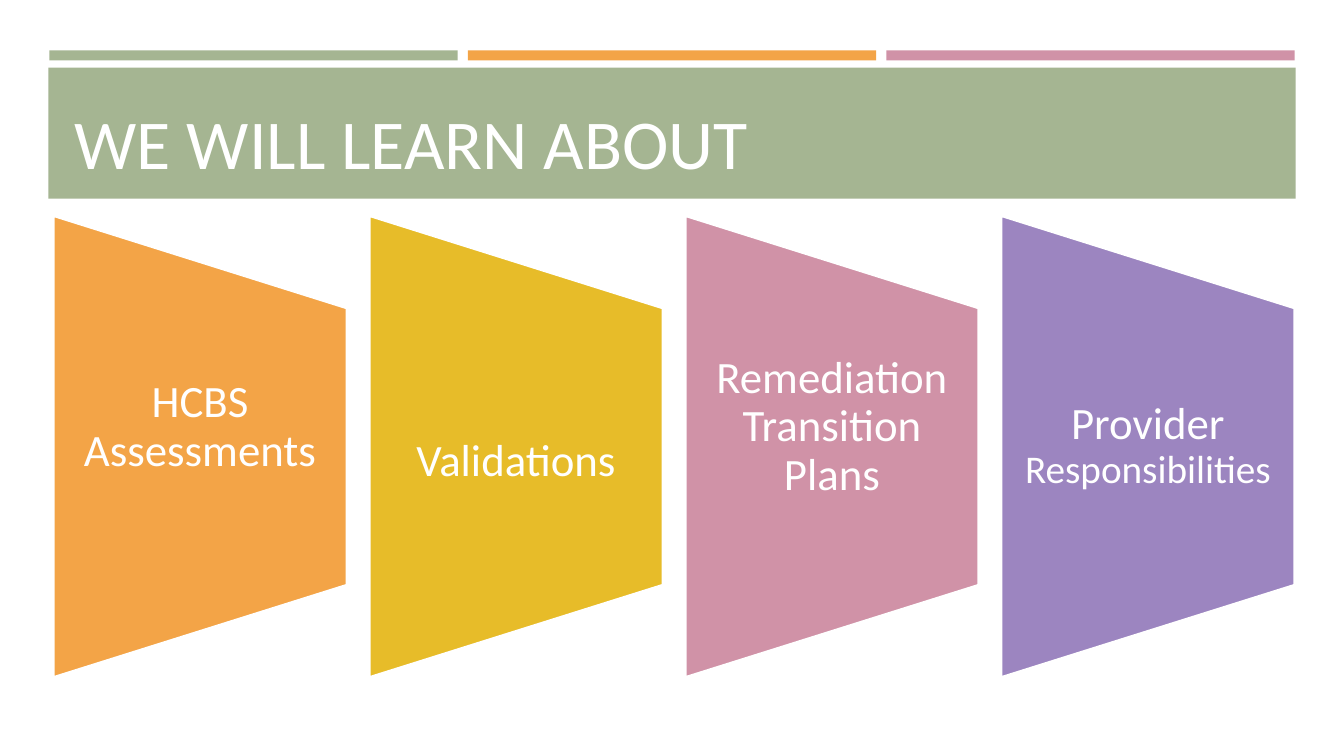
import pptx
import pptx.util
import pptx.dml.color
import pptx.enum.shapes
import pptx.enum.text

Inches = pptx.util.Inches
SHAPE = pptx.enum.shapes.MSO_SHAPE
ANCHOR = pptx.enum.text.MSO_ANCHOR
ALIGN = pptx.enum.text.PP_ALIGN

WHITE, GREEN, ORANGE = "FFFFFF", "A5B592", "F3A447"
GOLD, PINK, PURPLE = "E7BC29", "D092A7", "9C85C0"

# Runs of text with their sizes, fill, side inset, and text shift
CARDS = [
    ([("HCBS Assessments", 32)], ORANGE, 0.22, -0.19),
    ([("Validations", 32)], GOLD, 0.1, 0.15),
    ([("Remediation Transition Plans", 32)], PINK, 0.22, -0.19),
    ([("Provider ", 32), ("Responsibilities", 28)], PURPLE, 0.22, 0),
]


def color(code):
    return pptx.dml.color.RGBColor.from_string(code)


def place(shape, left, top, width, height):
    shape.left, shape.top = Inches(left), Inches(top)
    shape.width, shape.height = Inches(width), Inches(height)


def write(shape, runs, align=ALIGN.CENTER, anchor=ANCHOR.MIDDLE,
          side=0.1, edge=0, space=0.9):
    """Fill a shape with one paragraph made of (text, size) runs."""
    frame = shape.text_frame
    frame.word_wrap = True
    frame.auto_size = pptx.enum.text.MSO_AUTO_SIZE.NONE
    frame.vertical_anchor = anchor
    frame.margin_left = frame.margin_right = Inches(side)
    frame.margin_top = frame.margin_bottom = Inches(edge)
    para = frame.paragraphs[0]
    para.alignment, para.line_spacing = align, space
    for text, size in runs:
        run = para.add_run()
        run.text = text
        run.font.name = "Calibri"
        run.font.size = pptx.util.Pt(size)
        run.font.color.rgb = color(WHITE)


def draw(slide, kind, left, top, width, height, fill, line=None):
    shape = slide.shapes.add_shape(kind, 0, 0, 0, 0)
    place(shape, left, top, width, height)
    shape.shadow.inherit = False
    shape.fill.solid()
    shape.fill.fore_color.rgb = color(fill)
    if line:
        shape.line.color.rgb = color(line)
        shape.line.width = pptx.util.Pt(1.75)
    else:
        shape.line.fill.background()
    return shape


def header(slide, left, top, width):
    bar, step = 4.05, 4.15
    for i, fill in enumerate([GREEN, ORANGE, PINK]):
        draw(slide, SHAPE.RECTANGLE, left + 0.01 + i * step, top,
             bar, 0.1, fill)
    draw(slide, SHAPE.RECTANGLE, left, top + 0.17, width, 1.3, GREEN)
    title = slide.shapes.title
    place(title, left + 0.16, top + 0.27, width - 0.31, 1.11)
    write(title, [("WE WILL LEARN ABOUT", 50)], align=ALIGN.LEFT,
          anchor=ANCHOR.BOTTOM, edge=0.05)
    # Bring the title in front of the band
    slide.shapes._spTree.append(title._element)


def card(slide, left, top, width, height, runs, fill, side, shift):
    """Draw a trapezoid with its long edge on the left, and its label."""
    turn = (height - width) / 2
    shape = draw(slide, SHAPE.FLOWCHART_MANUAL_OPERATION, left - turn,
                 top + turn, height, width, fill, WHITE)
    shape.rotation = 270
    tall = height * 0.6
    label = slide.shapes.add_textbox(0, 0, 0, 0)
    place(label, left, top + (height - tall) / 2 + shift, width, tall)
    write(label, runs, side=side)


def cards(slide, left, top, width, height):
    wide = 2.91
    step = (width - wide) / (len(CARDS) - 1)
    for i, spec_row in enumerate(CARDS):
        card(slide, left + i * step, top, wide, height, *spec_row)


def main():
    deck = pptx.Presentation()
    deck.slide_width, deck.slide_height = Inches(13.33), Inches(7.5)
    slide = deck.slides.add_slide(deck.slide_layouts[5])
    header(slide, 0.48, 0.5, 12.37)
    cards(slide, 0.53, 2.14, 12.31, 4.58)
    deck.save("out.pptx")


if __name__ == "__main__":
    main()
